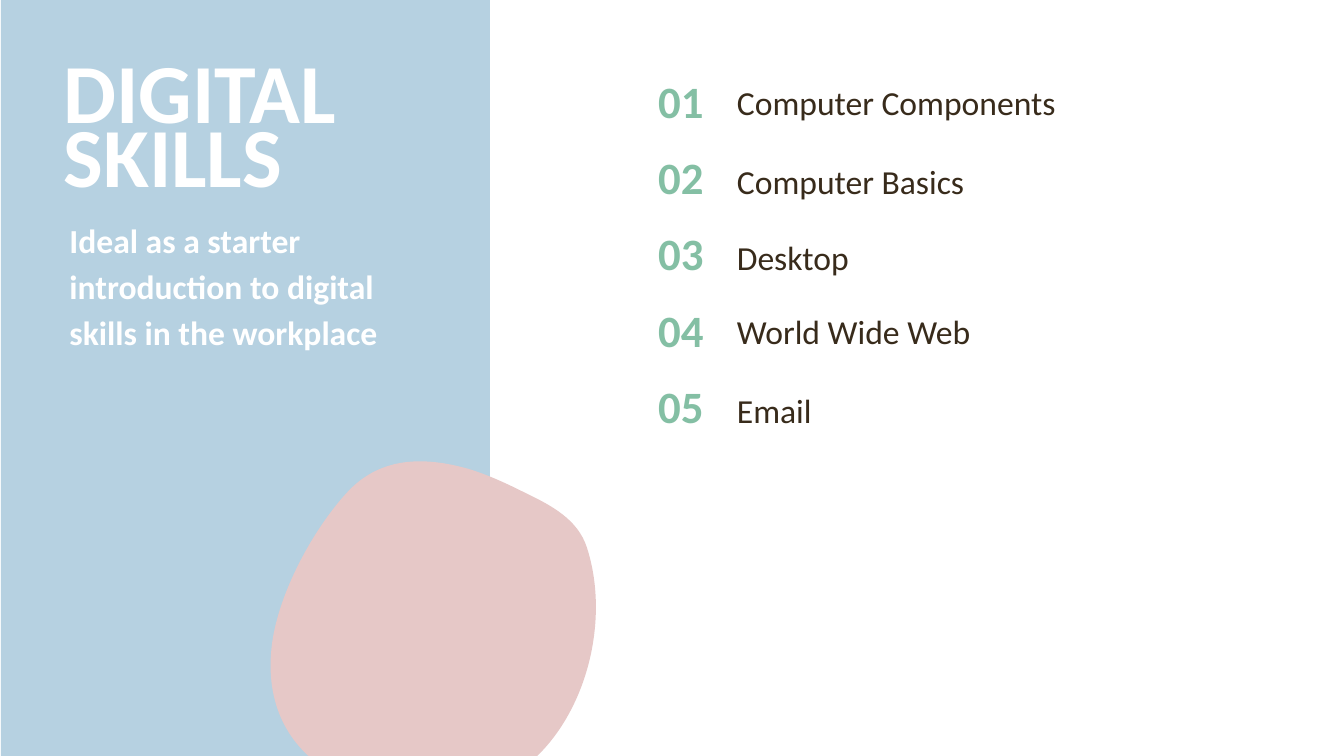
from dataclasses import dataclass

from lxml import etree
from pptx import Presentation
from pptx.dml.color import RGBColor
from pptx.enum.shapes import MSO_SHAPE
from pptx.enum.text import MSO_ANCHOR, MSO_AUTO_SIZE, PP_ALIGN
from pptx.oxml.ns import qn
from pptx.util import Inches, Pt

RECT = MSO_SHAPE.RECTANGLE
TOP, MIDDLE = MSO_ANCHOR.TOP, MSO_ANCHOR.MIDDLE
LEFT = PP_ALIGN.LEFT
NO_FIT = MSO_AUTO_SIZE.NONE


@dataclass(frozen=True)
class Theme:
    font: str = "Calibri"
    blue: str = "B6D1E1"
    pink: str = "E6C8C7"
    green: str = "84BFA4"
    brown: str = "382B1B"
    white: str = "FFFFFF"
    title: int = 60
    number: int = 32
    body: int = 24


THEME = Theme()
TOPICS = [
    ("Computer Components", 0, False),
    ("Computer Basics", 0.75, True),
    ("Desktop", 1.5, True),
    ("World Wide Web", 2.27, False),
    ("Email", 3.02, True),
]
BLOB_START = (1.95, 0.07)
BLOB_CURVES = [
    ((1.52, -0.05), (1.07, -0.06), (0.73, 0.33)),
    ((0.4, 0.7), (0.08, 1.3), (0.01, 1.79)),
    ((-0.15, 2.95), (0.88, 3.45), (1.92, 3.29)),
    ((2.93, 3.13), (3.44, 1.8), (3.13, 0.85)),
    ((3.04, 0.57), (2.77, 0.43), (2.52, 0.31)),
    ((2.34, 0.22), (2.15, 0.13), BLOB_START),
]


def place(shape, box):
    shape.left, shape.top, shape.width, shape.height = map(Inches, box)


def paint(shape, color):
    shape.shadow.inherit = False
    shape.fill.solid()
    shape.fill.fore_color.rgb = RGBColor.from_string(color)
    shape.line.fill.background()


def write(shape, text, size, color, bold=False, anchor=TOP, line=1.0, after=0):
    frame = shape.text_frame
    frame.word_wrap = True
    frame.auto_size = NO_FIT
    frame.vertical_anchor = anchor
    frame.text = text
    para = frame.paragraphs[0]
    para.alignment = LEFT
    para.line_spacing = line
    para.space_before = Pt(0)
    para.space_after = Pt(after)
    font = para.runs[0].font
    font.name = THEME.font
    font.size = Pt(size)
    font.bold = bold
    font.color.rgb = RGBColor.from_string(color)


def add_text(slide, box, text, size, color, **style):
    shape = slide.shapes.add_textbox(*map(Inches, box))
    write(shape, text, size, color, **style)


def add_panel(slide, box):
    left, top, width, height = box
    panel = slide.shapes.add_shape(RECT, *map(Inches, box))
    paint(panel, THEME.blue)
    title = slide.shapes.title
    place(title, (left + 0.52, top + 0.7, width - 0.78, 1.36))
    write(title, "DIGITAL SKILLS", THEME.title, THEME.white, bold=True, line=Pt(46))
    panel._element.addnext(title._element)


def add_intro(slide, box):
    add_text(slide, box,
             "Ideal as a starter introduction to digital skills in the workplace",
             THEME.body, THEME.white, bold=True, line=1.15)


def add_step(outline, tag, points):
    step = etree.SubElement(outline, qn(tag))
    for x, y in points:
        etree.SubElement(step, qn("a:pt"), x=str(Inches(x)), y=str(Inches(y)))


def add_blob(slide, box):
    left, top, width, height = map(Inches, box)
    pen = slide.shapes.build_freeform(left, top)
    pen.add_line_segments([(left + width, top), (left + width, top + height)])
    blob = pen.convert_to_shape()
    outline = next(blob._element.iter(qn("a:path")))
    for step in list(outline):
        outline.remove(step)
    add_step(outline, "a:moveTo", [BLOB_START])
    for curve in BLOB_CURVES:
        add_step(outline, "a:cubicBezTo", curve)
    etree.SubElement(outline, qn("a:close"))
    paint(blob, THEME.pink)


def add_topics(slide, box):
    left, top, width, height = box
    gap = 0.78
    for count, (label, drop, loose) in enumerate(TOPICS, 1):
        row = top + drop
        add_text(slide, (left, row, gap, height), f"{count:02}", THEME.number,
                 THEME.green, bold=True, anchor=MIDDLE, line=0.9)
        add_text(slide, (left + gap, row, width - gap, height), label, THEME.body,
                 THEME.brown, anchor=MIDDLE, line=1.07 if loose else 0.9,
                 after=8 if loose else 0)


def main():
    deck = Presentation()
    deck.slide_width, deck.slide_height = Inches(13.33), Inches(7.5)
    slide = deck.slides.add_slide(deck.slide_layouts[5])
    add_panel(slide, (0.01, 0, 4.85, 7.5))
    add_blob(slide, (2.69, 4.58, 3.22, 3.32))
    add_topics(slide, (6.43, 0.66, 6.03, 0.75))
    add_intro(slide, (0.59, 2.07, 3.52, 1.47))
    deck.save("out.pptx")


if __name__ == "__main__":
    main()
